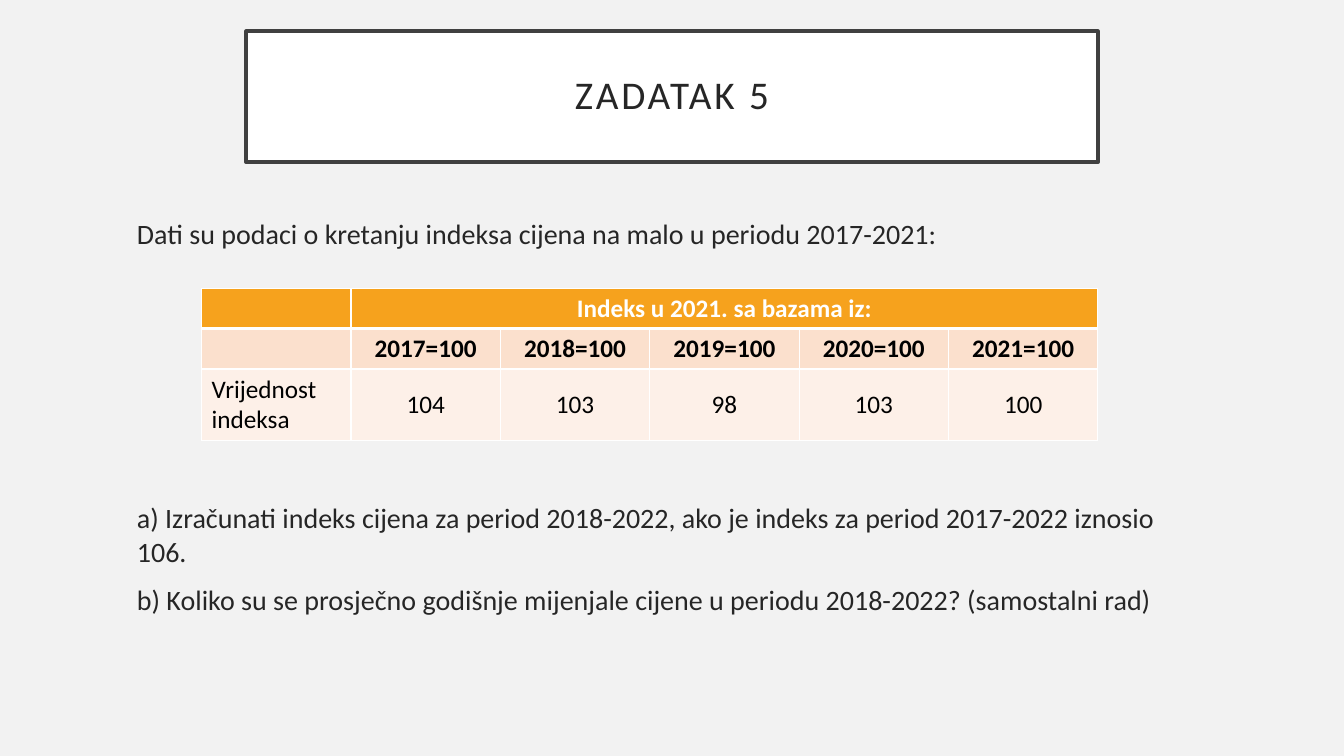
import pptx
import pptx.util
import pptx.dml.color
import pptx.enum.text
import pptx.oxml.ns
import lxml.etree

Inches, Pt = pptx.util.Inches, pptx.util.Pt
ALIGN, ANCHOR = pptx.enum.text.PP_ALIGN, pptx.enum.text.MSO_ANCHOR
INK = {"back": "F2F2F2", "white": "FFFFFF", "edge": "404040", "text": "262626",
       "black": "000000", "head": "F6A21D", "sub": "FBE0CD", "row": "FDF0E8"}
BASES = ["", "2017=100", "2018=100", "2019=100", "2020=100", "2021=100"]
VALUES = ["Vrijednost indeksa", "104", "103", "98", "103", "100"]
LINES = [
    ("Dati su podaci o kretanju indeksa cijena na malo u periodu 2017-2021:", 0),
    ("a) Izračunati indeks cijena za period 2018-2022, ako je indeks za period "
     "2017-2022 iznosio 106.", 179),
    ("b) Koliko su se prosječno godišnje mijenjale cijene u periodu 2018-2022? "
     "(samostalni rad)", 10),
]


def tint(name):
    """Return the named colour."""
    return pptx.dml.color.RGBColor.from_string(INK[name])


def paint(fill, name):
    """Make a fill solid in the named colour."""
    fill.solid()
    fill.fore_color.rgb = tint(name)


def style(para, size, name, bold=False, align=ALIGN.LEFT):
    """Set the font and alignment of a paragraph."""
    para.alignment = align
    font = para.font
    font.name, font.size, font.bold = "Calibri", Pt(size), bold
    font.color.rgb = tint(name)


def add_title(slide, box):
    """Place the framed title in its box."""
    title = slide.shapes.title
    title.left, title.top, title.width, title.height = map(Inches, box)
    paint(title.fill, "white")
    title.line.color.rgb = tint("edge")
    title.line.width = Pt(2.5)
    frame = title.text_frame
    frame.text = "ZADATAK 5"
    frame.word_wrap = True
    frame.auto_size = pptx.enum.text.MSO_AUTO_SIZE.NONE
    frame.vertical_anchor = ANCHOR.MIDDLE
    frame.margin_left = frame.margin_right = Inches(0.2)
    frame.margin_top = frame.margin_bottom = Inches(0.2)
    para = frame.paragraphs[0]
    para.line_spacing = 0.9
    style(para, 28, "text", align=ALIGN.CENTER)
    para.runs[0].font._element.set("spc", "200")


def add_body(slide, box):
    """Place the task text, with a gap for the table."""
    frame = slide.shapes.add_textbox(*map(Inches, box)).text_frame
    frame.word_wrap = True
    for i, (text, gap) in enumerate(LINES):
        para = frame.add_paragraph() if i else frame.paragraphs[0]
        para.text = text
        para.space_before = Pt(gap)
        style(para, 20, "text")


def add_edges(cell, low):
    """Draw white cell borders, the lower one of the given width."""
    props = cell._tc.get_or_add_tcPr()
    qn = pptx.oxml.ns.qn
    for i, (side, wide) in enumerate(zip("LRTB", (1, 1, 1, low))):
        edge = lxml.etree.Element(qn("a:ln" + side), w=str(Pt(wide)))
        fill = lxml.etree.SubElement(edge, qn("a:solidFill"))
        lxml.etree.SubElement(fill, qn("a:srgbClr"), val=INK["white"])
        props.insert(i, edge)


def add_table(slide, box):
    """Place the index table in its box."""
    rows = [["", "Indeks u 2021. sa bazama iz:", "", "", "", ""], BASES, VALUES]
    looks = [("head", "white", True, 3), ("sub", "black", True, 1),
             ("row", "black", False, 1)]
    table = slide.shapes.add_table(3, 6, *map(Inches, box)).table
    for row, high in zip(table.rows, (0.4, 0.4, 0.71)):
        row.height = Inches(high)
    for r, (words, (fill, ink, bold, low)) in enumerate(zip(rows, looks)):
        for c, word in enumerate(words):
            cell = table.cell(r, c)
            cell.text = word
            cell.vertical_anchor = ANCHOR.MIDDLE
            paint(cell.fill, fill)
            add_edges(cell, low)
            style(cell.text_frame.paragraphs[0], 18, ink, bold,
                  ALIGN.CENTER if c else ALIGN.LEFT)
    table.cell(0, 1).merge(table.cell(0, 5))


def main():
    """Build the slide and save it."""
    deck = pptx.Presentation()
    deck.slide_width, deck.slide_height = Inches(13.33), Inches(7.5)
    slide = deck.slides.add_slide(deck.slide_layouts[5])
    paint(slide.background.fill, "back")
    add_title(slide, (2.44, 0.31, 8.45, 1.3))
    add_body(slide, (1.26, 2.1, 10.8, 5))
    add_table(slide, (2, 2.86, 8.89, 1.51))
    deck.save("out.pptx")


if __name__ == "__main__":
    main()
